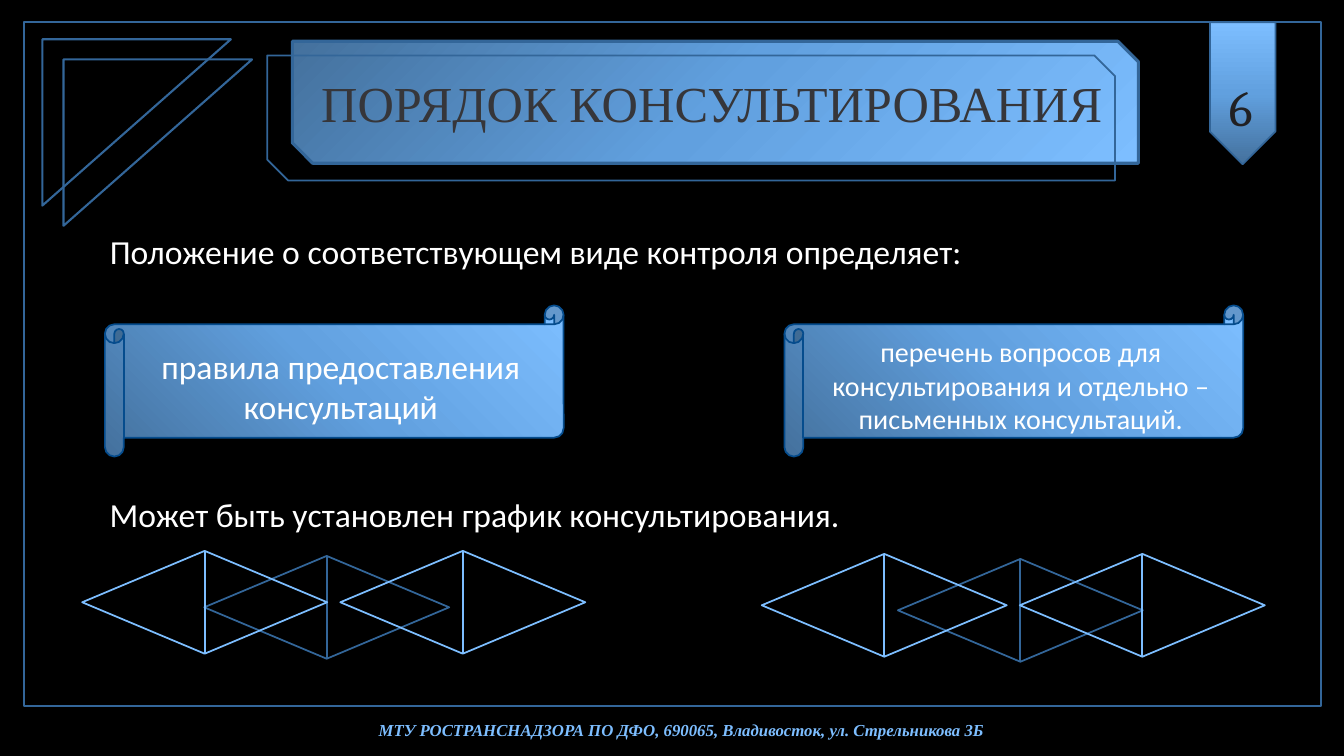
"""Build the slide on the order of consultations."""
import copy

import pptx
import pptx.dml.color
import pptx.enum.dml
import pptx.enum.shapes
import pptx.enum.text
import pptx.oxml.ns
import pptx.util

Inches = pptx.util.Inches
Pt = pptx.util.Pt
KIND = pptx.enum.shapes.MSO_SHAPE
ALIGN = pptx.enum.text.PP_ALIGN
color = pptx.dml.color.RGBColor.from_string

STEEL, SKY, NAVY, WHITE = "336699", "7DBEFF", "054C8D", "FFFFFF"
GRADIENT = [(0, "44719D"), (0.5, "61A0DF"), (1, SKY)]


def draw(kind, at, line, weight, angle=None, rotation=0):
    shape = page.shapes.add_shape(kind, *map(Inches, at))
    shape.shadow.inherit = False
    shape.rotation = rotation
    shape.line.color.rgb = color(line)
    shape.line.width = Pt(weight)
    if angle is None:
        shape.fill.background()
        return shape
    shape.fill.gradient()
    shape.fill.gradient_angle = angle
    stops = shape._element.spPr.find(".//" + pptx.oxml.ns.qn("a:gsLst"))
    stops.append(copy.deepcopy(stops[-1]))
    for stop, (position, tone) in zip(shape.fill.gradient_stops, GRADIENT):
        stop.position = position
        stop.color.rgb = color(tone)
    return shape


def write(box, at, text, tone, font, paragraph, wrap=True):
    box.left, box.top, box.width, box.height = map(Inches, at)
    frame = box.text_frame
    frame.word_wrap = wrap
    frame.auto_size = pptx.enum.text.MSO_AUTO_SIZE.SHAPE_TO_FIT_TEXT
    frame.vertical_anchor = pptx.enum.text.MSO_ANCHOR.TOP
    para = frame.paragraphs[0]
    span = para.add_run()
    span.text = text
    span.font.color.rgb = color(tone)
    for target, values in ((span.font, font), (para, paragraph)):
        for name, value in values.items():
            setattr(target, name, value)


deck = pptx.Presentation()
deck.slide_width, deck.slide_height = Inches(13.33), Inches(7.5)
page = deck.slides.add_slide(deck.slide_layouts[5])
page.background.fill.solid()
page.background.fill.fore_color.rgb = color("000000")

draw(KIND.RECTANGLE, (0.24, 0.22, 12.86, 6.78), STEEL, 1.5)
for left, top in ((0.42, 0.39), (0.63, 0.59)):
    corner = draw(KIND.RIGHT_TRIANGLE, (left, top, 1.87, 1.65), STEEL, 1.5)
    corner._element.spPr.xfrm.set("flipV", "1")
draw(KIND.PENTAGON, (11.62, 0.6, 1.41, 0.65), STEEL, 1.25, angle=180, rotation=90)

draw(KIND.SNIP_2_DIAG_RECTANGLE, (2.9, 0.41, 8.39, 1.21), STEEL, 2.25, angle=315)
title = page.shapes.title
page.shapes._spTree.append(title._element)
write(title, (3.06, 0.78, 8, 0.59), "ПОРЯДОК КОНСУЛЬТИРОВАНИЯ", "36363A",
      {"name": "Times New Roman", "size": Pt(36)},
      {"alignment": ALIGN.CENTER, "line_spacing": Pt(35)})
draw(KIND.SNIP_2_DIAG_RECTANGLE, (2.65, 0.55, 8.41, 1.24), STEEL, 1.25)

for left in (1.04, 7.78):
    draw(KIND.HORIZONTAL_SCROLL, (left, 3.03, 4.55, 1.5), NAVY, 1.25, angle=45)

for middle, top, side in ((2.73, 4.76, 1), (9.61, 4.79, -1)):
    for shift, drop, line in ((0, 0.05, STEEL), (-1.21, 0, SKY), (1.35, 0, SKY)):
        draw(KIND.FLOWCHART_SORT, (middle + side * shift, top + drop, 1.02, 2.43),
             line, 1.25, rotation=90)

centered, plain = {"alignment": ALIGN.CENTER}, {"alignment": ALIGN.LEFT}
body = {"name": "Calibri", "size": Pt(24)}
texts = [
    ((2.23, 7.13, 9.06, 0.26),
     "МТУ РОСТРАНСНАДЗОРА ПО ДФО, 690065, Владивосток, ул. Стрельникова 3Б", SKY,
     {"name": "Times New Roman", "size": Pt(12), "bold": True, "italic": True},
     {"alignment": ALIGN.CENTER, "line_spacing": 0.8}, True),
    ((12.09, 0.71, 0.48, 0.71), "6", "212123",
     {"name": "Cambria", "size": Pt(36)}, plain, False),
    ((1.35, 3.38, 4.06, 0.91), "правила предоставления консультаций",
     WHITE, body, centered, True),
    ((7.94, 3.27, 4.37, 1.11),
     "перечень вопросов для консультирования и отдельно – письменных консультаций.",
     WHITE, {**body, "size": Pt(20)}, centered, True),
    ((0.99, 2.24, 8.65, 0.5), "Положение о соответствующем виде контроля определяет:",
     WHITE, body, plain, False),
    ((0.99, 4.85, 7.54, 0.5), "Может быть установлен график консультирования.",
     WHITE, body, plain, False),
]
for at, *content in texts:
    write(page.shapes.add_textbox(*map(Inches, at)), at, *content)

deck.save("out.pptx")
